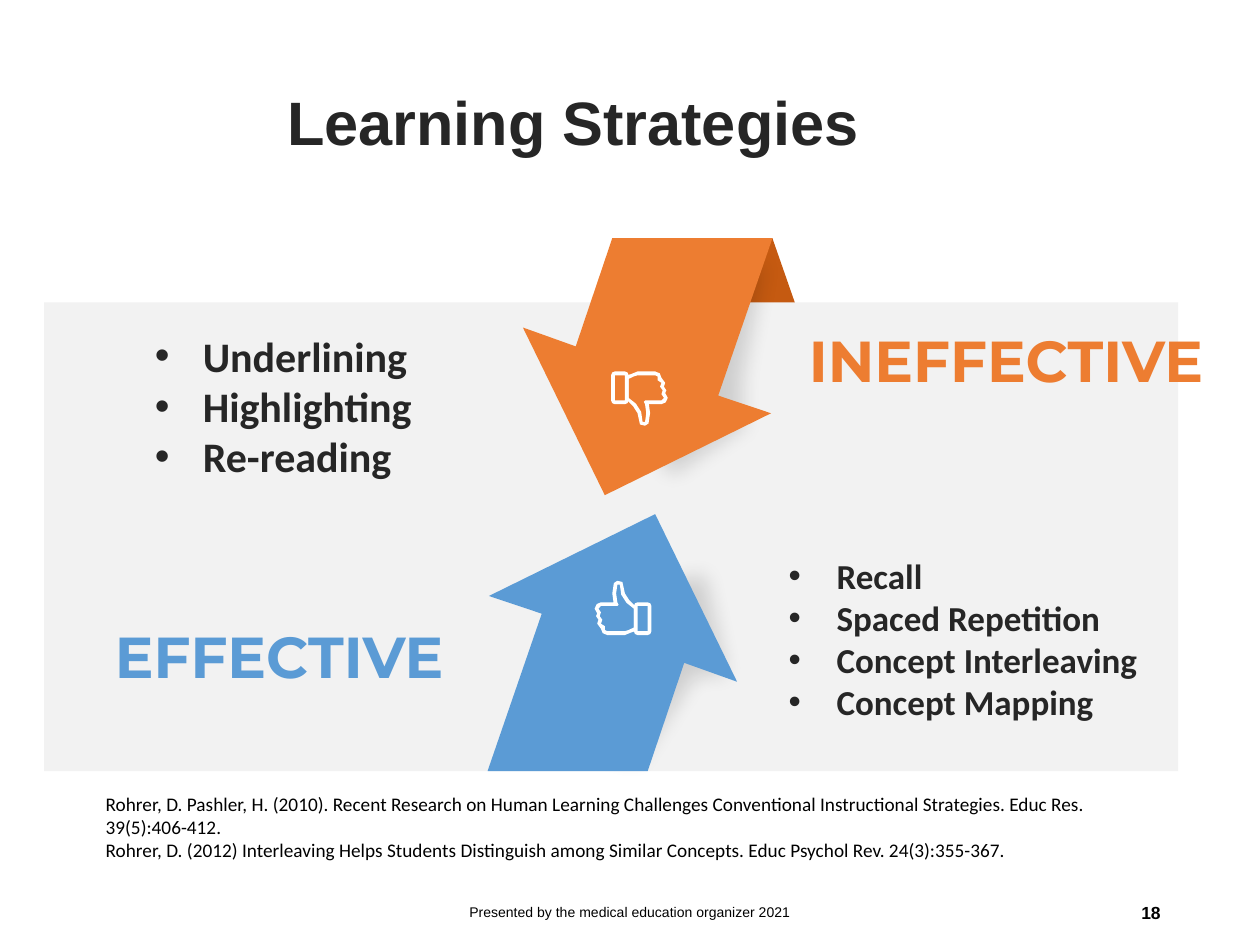
from lxml import etree
from pptx import Presentation
from pptx.dml.color import RGBColor
from pptx.enum import shapes, text
from pptx.oxml import ns
from pptx.util import Pt

THEME = {
    "ink": "262626", "black": "000000", "white": "FFFFFF", "panel": "F2F2F2",
    "bad": "ED7D31", "bad_fold": "C55A11", "good": "5B9BD5",
    "title": 35, "heading": 33, "list_large": 24, "list_small": 20,
    "reference": 11, "footer": 8, "number": 10,
    "plain": "Arial", "body": "Calibri", "display": "Montserrat",
}
SHADOW_ALPHA = 15
SHADOW_SOFTNESS = 12
BULLET_INDENT = 27.36

INEFFECTIVE = ["Underlining", "Highlighting", "Re-reading"]
EFFECTIVE = ["Recall", "Spaced Repetition", "Concept Interleaving", "Concept Mapping"]
REFERENCES = [
    "Rohrer, D. Pashler, H. (2010). Recent Research on Human Learning Challenges "
    "Conventional Instructional Strategies. Educ Res. 39(5):406-412.",
    "Rohrer, D. (2012) Interleaving Helps Students Distinguish among Similar Concepts. "
    "Educ Psychol Rev. 24(3):355-367.",
]

# Outlines in points; the upper arrow and the raised thumb are turned for their partners.
PANEL = (25.2, 172.8, 648, 267.84)
FOLD = [(403.2, 290.2), (350.6, 136.1), (441.4, 136.1), (485.3, 262.1)]
ARROW_DOWN = [(441.4, 136.1), (349.9, 136.1), (329, 198), (298.8, 187.2),
              (345.6, 283), (440.6, 236.2), (410.4, 226.1)]
SHADOW_DOWN = [(453.6, 135.4), (363.6, 148.3), (351.4, 212.4), (319.7, 205.9),
               (379.4, 293.8), (467.3, 234.7), (435.6, 228.2)]
SHADOW_UP = [(285.1, 430.6), (373, 452.2), (409, 397.4), (435.6, 414.7),
             (413.3, 311.8), (309.6, 333.4), (336.2, 350.6)]
HAND_OUTER = [(339.8, 347.8), (341, 345.2), (343.4, 344.2), (350.6, 344.2), (349.9, 339.1),
              (350.8, 333.2), (352.8, 331.9), (355.7, 332.6), (357.1, 339.1), (359.6, 343),
              (362.9, 346.3), (362.9, 360.7), (360.7, 361.4), (357.1, 362.9), (347, 362.9),
              (344.4, 361.8), (343.4, 359.3), (341.3, 356.4), (342, 354.2), (340.6, 352.1),
              (341.3, 350.6)]
HAND_INNER = [(342, 347.8), (343.4, 349.9), (342.7, 352.1), (344.2, 354.2), (343.4, 356.4),
              (345.6, 357.8), (345.6, 360), (347, 360.7), (357.1, 360.7), (359.3, 360),
              (362.2, 358.6), (362.2, 347.8), (358, 344.5), (355, 339.8), (354.2, 334.1),
              (352.8, 334.1), (352.1, 339.1), (352.8, 344.2), (353.5, 345.6),
              (352.8, 346.3), (343.4, 346.3)]
CUFF_OUTER = [(364.3, 344.2), (370.1, 344.2), (371.6, 344.8), (372.2, 346.3), (372.2, 360.7),
              (371.6, 362.3), (370.1, 362.9), (364.3, 362.9), (362.8, 362.3), (362.2, 360.7),
              (362.2, 346.3), (362.8, 344.8)]
CUFF_INNER = [(364.3, 346.3), (370.1, 346.3), (370.1, 360.7), (364.3, 360.7)]
THUMB_UP = [[HAND_OUTER, HAND_INNER], [CUFF_OUTER, CUFF_INNER]]
ARROW_CENTER = (360, 288.4)
THUMB_CENTER = (360.7, 287.6)


def color(name):
    return RGBColor.from_string(THEME[name])


def half_turn(points, center):
    return [(2 * center[0] - x, 2 * center[1] - y) for x, y in points]


def paint(shape, fill):
    shape.shadow.inherit = False
    shape.fill.solid()
    shape.fill.fore_color.rgb = color(fill)
    shape.line.fill.background()


def add_outline(parent, contours, fill):
    """Draw closed contours as one shape; a contour inside another is a hole."""
    first, *holes = [[(Pt(x), Pt(y)) for x, y in contour] for contour in contours]
    builder = parent.build_freeform(*first[0])
    builder.add_line_segments(first[1:])
    for hole in holes:
        builder.move_to(*hole[0])
        builder.add_line_segments(hole[1:])
    shape = builder.convert_to_shape()
    paint(shape, fill)
    return shape


def add_soft_shadow(parent, points):
    shape = add_outline(parent, [points], "black")
    properties = shape.element.spPr
    tint = properties.find(ns.qn("a:solidFill"))[0]
    etree.SubElement(tint, ns.qn("a:alpha"), val=str(SHADOW_ALPHA * 1000))
    effects = properties.find(ns.qn("a:effectLst"))
    etree.SubElement(effects, ns.qn("a:softEdge"), rad=str(Pt(SHADOW_SOFTNESS)))


def add_thumb(parent, parts):
    group = parent.add_group_shape()
    for contours in parts:
        add_outline(group.shapes, contours, "white")


def add_bullet(paragraph):
    properties = paragraph._p.get_or_add_pPr()
    properties.set("marL", str(Pt(BULLET_INDENT)))
    properties.set("indent", str(-Pt(BULLET_INDENT)))
    etree.SubElement(properties, ns.qn("a:buFont"), typeface="Arial")
    etree.SubElement(properties, ns.qn("a:buChar"), char="•")


def add_text(slide, box, lines, size, font, ink, bold=False, align="LEFT", anchor="TOP",
             insets=(7.2, 3.6, 7.2, 3.6), bullets=False, spacing=None):
    frame = slide.shapes.add_textbox(*map(Pt, box)).text_frame
    frame.word_wrap = True
    frame.vertical_anchor = getattr(text.MSO_ANCHOR, anchor)
    (frame.margin_left, frame.margin_top,
     frame.margin_right, frame.margin_bottom) = map(Pt, insets)
    for index, line in enumerate(lines):
        paragraph = frame.add_paragraph() if index else frame.paragraphs[0]
        paragraph.alignment = getattr(text.PP_ALIGN, align)
        if spacing:
            paragraph.line_spacing = spacing
        if bullets:
            add_bullet(paragraph)
        run = paragraph.add_run()
        run.text = line
        run.font.size = Pt(THEME[size])
        run.font.name = THEME[font]
        run.font.bold = bold
        run.font.color.rgb = color(ink)


def add_arrows(slide):
    add_soft_shadow(slide.shapes, SHADOW_DOWN)
    add_outline(slide.shapes, [ARROW_DOWN], "bad")
    add_soft_shadow(slide.shapes, SHADOW_UP)
    add_outline(slide.shapes, [half_turn(ARROW_DOWN, ARROW_CENTER)], "good")
    add_thumb(slide.shapes, THUMB_UP)
    add_thumb(slide.shapes, [[half_turn(contour, THUMB_CENTER) for contour in part]
                             for part in THUMB_UP])


def add_labels(slide):
    add_text(slide, (156.96, 19.44, 514.08, 104.4), ["Learning Strategies"],
             "title", "plain", "ink", bold=True, anchor="MIDDLE", spacing=0.9)
    heading = {"size": "heading", "font": "display", "bold": True,
               "anchor": "MIDDLE", "insets": (0, 0, 0, 0)}
    add_text(slide, (462.24, 185.04, 244.08, 40.32), ["INEFFECTIVE"], ink="bad", **heading)
    add_text(slide, (38.16, 354.24, 215.28, 40.32), ["EFFECTIVE"], ink="good",
             align="RIGHT", **heading)
    bulleted = {"font": "body", "ink": "ink", "bold": True, "bullets": True}
    add_text(slide, (88.56, 185.04, 161.28, 94.32), INEFFECTIVE, "list_large",
             insets=(0, 3.6, 0, 3.6), **bulleted)
    add_text(slide, (450.72, 312.48, 206.64, 118.8), EFFECTIVE, "list_small",
             anchor="BOTTOM", insets=(0, 3.6, 0, 18.2), **bulleted)


def add_footer(slide):
    add_text(slide, (238.32, 506.88, 243.36, 28.8),
             ["Presented by the medical education organizer 2021"],
             "footer", "plain", "black", align="CENTER", anchor="MIDDLE")
    add_text(slide, (508.32, 506.88, 162, 28.8), ["18"], "number", "plain", "black",
             bold=True, align="RIGHT", anchor="MIDDLE")
    add_text(slide, (53.28, 449.28, 609.84, 47.52), REFERENCES, "reference", "body", "black")


def main():
    presentation = Presentation()
    presentation.slide_width, presentation.slide_height = Pt(720), Pt(540)
    slide = presentation.slides.add_slide(presentation.slide_layouts[6])
    add_outline(slide.shapes, [FOLD], "bad_fold")
    panel = slide.shapes.add_shape(shapes.MSO_SHAPE.RECTANGLE, *map(Pt, PANEL))
    paint(panel, "panel")
    add_labels(slide)
    add_arrows(slide)
    add_footer(slide)
    presentation.save("out.pptx")


if __name__ == "__main__":
    main()
